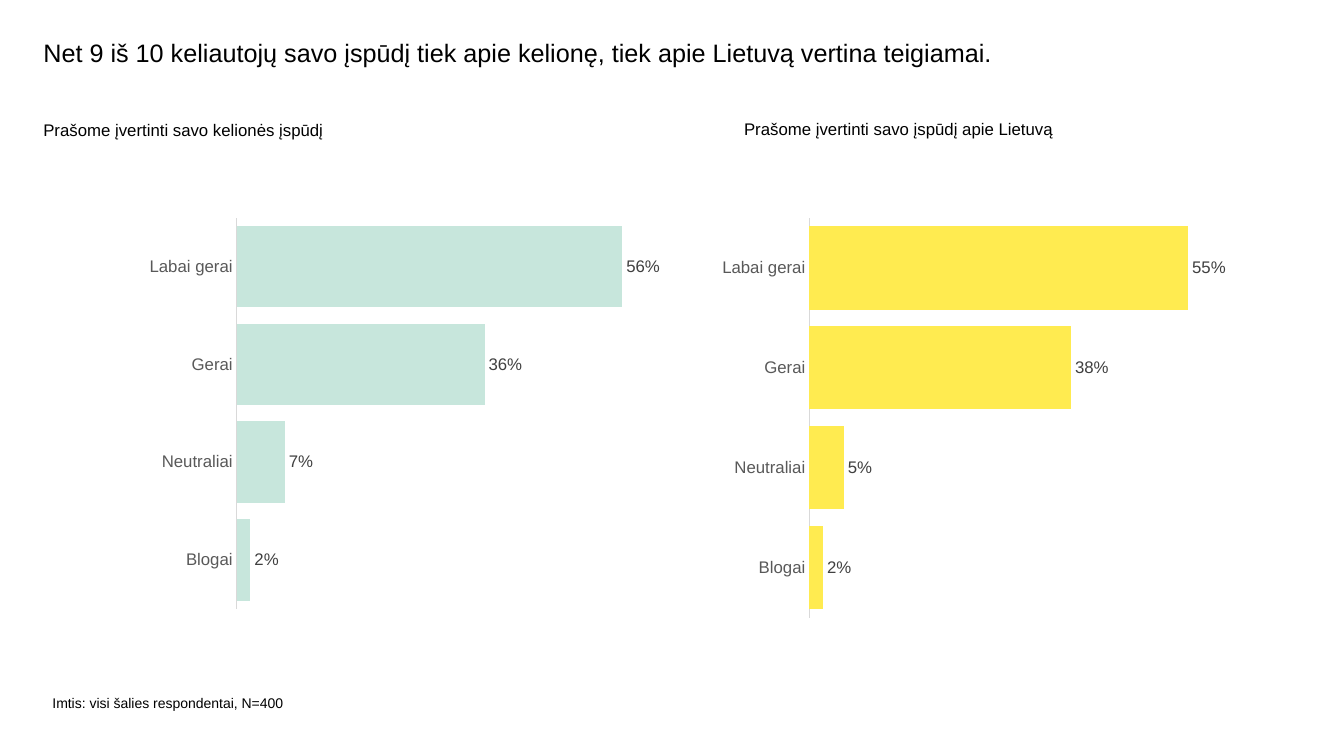
import pptx
import pptx.chart.data
import pptx.dml.color
import pptx.enum.chart
import pptx.enum.text
import pptx.util

COLORS = {
    "background": "FFFFFF",
    "text": "000000",
    "category": "595959",
    "value": "404040",
    "axis": "D9D9D9",
    "trip": "C7E6DC",
    "country": "FFEB50",
}
RATINGS = ["Labai gerai", "Gerai", "Neutraliai", "Blogai"]


class SurveySlide:
    font_name = "Arial"

    def __init__(self, presentation):
        self.slide = presentation.slides.add_slide(presentation.slide_layouts[6])
        self.paint(self.slide.background.fill, "background")

    def color(self, name):
        return pptx.dml.color.RGBColor.from_string(COLORS[name])

    def paint(self, fill, name):
        fill.solid()
        fill.fore_color.rgb = self.color(name)

    def style_font(self, font, size, color):
        font.name = self.font_name
        font.size = pptx.util.Pt(size)
        font.color.rgb = self.color(color)

    def text(self, box, words, size, line_spacing=1.0):
        shape = self.slide.shapes.add_textbox(*map(pptx.util.Inches, box))
        frame = shape.text_frame
        frame.word_wrap = True
        frame.vertical_anchor = pptx.enum.text.MSO_ANCHOR.TOP
        frame.margin_left = frame.margin_right = 0
        frame.margin_top = frame.margin_bottom = 0
        paragraph = frame.paragraphs[0]
        paragraph.text = words
        paragraph.line_spacing = line_spacing
        self.style_font(paragraph.font, size, "text")

    def rating_chart(self, box, shares, color):
        data = pptx.chart.data.CategoryChartData(number_format="0%")
        data.categories = RATINGS
        data.add_series("Series 1", shares)
        chart = self.slide.shapes.add_chart(
            pptx.enum.chart.XL_CHART_TYPE.BAR_CLUSTERED,
            *map(pptx.util.Inches, box),
            data,
        ).chart
        chart.has_legend = False
        chart.has_title = False
        self.style_font(chart.font, 10, "text")

        category_axis = chart.category_axis
        category_axis.reverse_order = True
        category_axis.major_tick_mark = pptx.enum.chart.XL_TICK_MARK.NONE
        category_axis.format.line.color.rgb = self.color("axis")
        category_axis.format.line.width = pptx.util.Pt(0.75)
        self.style_font(category_axis.tick_labels.font, 12, "category")

        value_axis = chart.value_axis
        value_axis.visible = False
        value_axis.has_major_gridlines = False
        value_axis.minimum_scale = 0
        value_axis.maximum_scale = 0.6

        plot = chart.plots[0]
        plot.gap_width = 20
        plot.vary_by_categories = False
        self.paint(plot.series[0].format.fill, color)
        plot.has_data_labels = True
        labels = plot.data_labels
        labels.show_value = True
        labels.number_format = "0%"
        labels.number_format_is_linked = False
        labels.position = pptx.enum.chart.XL_LABEL_POSITION.OUTSIDE_END
        self.style_font(labels.font, 12, "value")


def main():
    presentation = pptx.Presentation()
    presentation.slide_width = pptx.util.Inches(13.33)
    presentation.slide_height = pptx.util.Inches(7.5)

    survey = SurveySlide(presentation)
    survey.text(
        (0.43, 0.4, 11.25, 0.6),
        "Net 9 iš 10 keliautojų savo įspūdį tiek apie kelionę, tiek apie Lietuvą vertina teigiamai.",
        18,
        line_spacing=0.9,
    )
    survey.text((0.43, 1.19, 5.5, 0.7), "Prašome įvertinti savo kelionės įspūdį", 12)
    survey.text((7.38, 1.18, 5.5, 0.7), "Prašome įvertinti savo įspūdį apie Lietuvą", 12)
    survey.rating_chart((7.06, 2.08, 5.17, 4.13), (0.55, 0.38, 0.05, 0.02), "country")
    survey.rating_chart((1.38, 2.08, 5.17, 4.04), (0.56, 0.36, 0.07, 0.02), "trip")
    survey.text((0.52, 6.89, 3.86, 0.44), "Imtis: visi šalies respondentai, N=400", 10)

    presentation.save("out.pptx")


if __name__ == "__main__":
    main()
